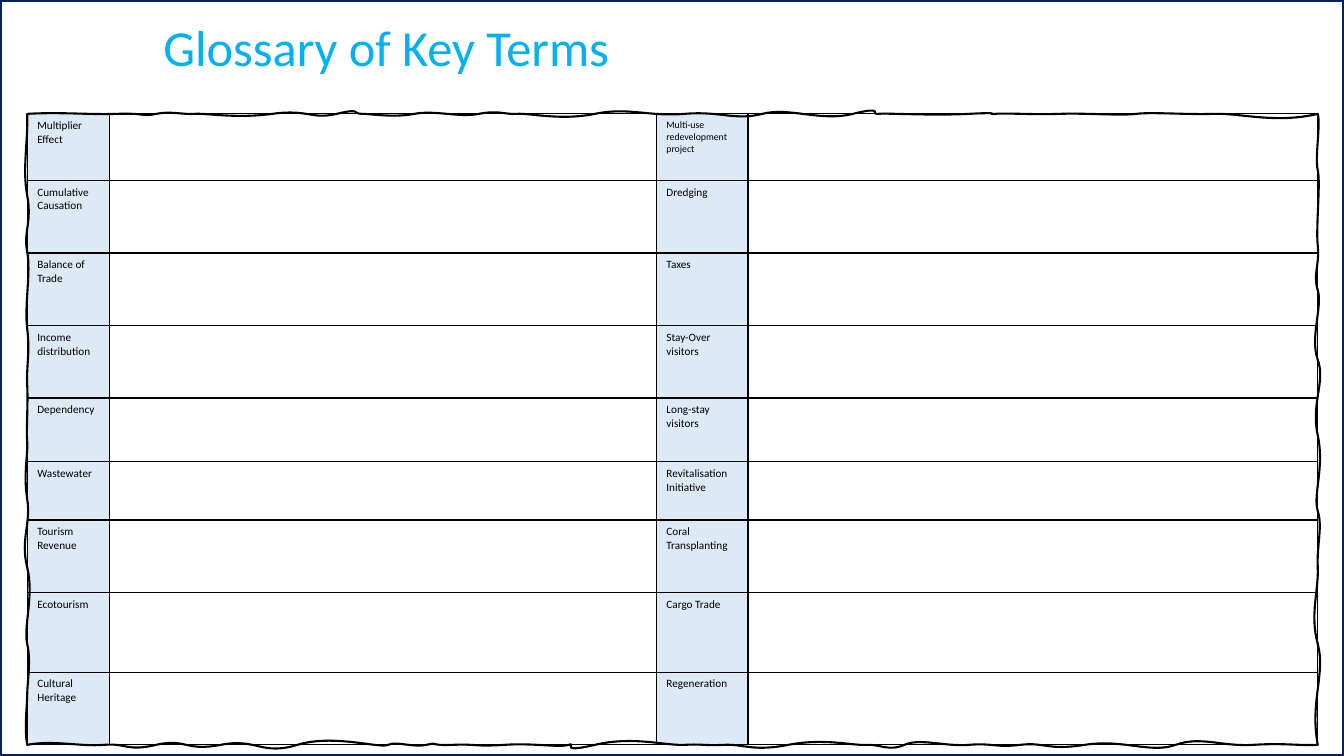
from lxml.etree import SubElement
from pptx import Presentation
from pptx.dml.color import RGBColor
from pptx.enum.shapes import MSO_SHAPE
from pptx.enum.text import MSO_ANCHOR, PP_ALIGN
from pptx.oxml.ns import qn
from pptx.util import Inches, Pt

# Content
TITLE = "Glossary of Key Terms "
TERMS = [
    ("Multiplier Effect", "Multi-use redevelopment project"),
    ("Cumulative Causation", "Dredging"),
    ("Balance of Trade", "Taxes"),
    ("Income distribution", "Stay-Over visitors"),
    ("Dependency", "Long-stay visitors"),
    ("Wastewater", "Revitalisation Initiative"),
    ("Tourism Revenue", "Coral Transplanting"),
    ("Ecotourism", "Cargo Trade"),
    ("Cultural Heritage", "Regeneration"),
]
COLUMN_WIDTHS = [0.82, 5.42, 0.91, 5.65]
ROW_HEIGHTS = [0.66, 0.72, 0.72, 0.72, 0.63, 0.58, 0.72, 0.79, 0.72]


class Theme:
    font = "Calibri"
    white = RGBColor(0xFF, 0xFF, 0xFF)
    black = RGBColor(0, 0, 0)
    navy = RGBColor(0x00, 0x20, 0x60)
    sky = RGBColor(0x00, 0xB0, 0xF0)
    term_fill = RGBColor(0xDD, 0xEA, 0xF6)
    title_size = Pt(36)
    term_size = Pt(8)
    long_term_size = Pt(7)
    long_term_length = 30


LEFT, TOP, RIGHT, BOTTOM = 0.27, 1.13, 13.07, 7.39

# Hand-drawn sides: level, first handle, then (handle along, handle across, end along).
# Each later curve starts with the mirror image of the handle before it.
TOP_SIDE = (TOP, (0.62, 1.11), [
    (0.88, 1.14, 1.16), (1.41, 1.16, 1.55), (1.83, 1.14, 1.93), (2.34, 1.18, 2.7),
    (3.09, 1.19, 3.34), (3.49, 1.13, 3.59), (3.9, 1.17, 4.11), (4.55, 1.17, 4.75),
    (5.01, 1.14, 5.13), (5.56, 1.2, 5.9), (6.43, 1.16, 6.79), (7.29, 1.2, 7.56),
    (8.14, 1.21, 8.46), (8.63, 1.14, 8.71), (9.23, 1.15, 9.61), (9.76, 1.14, 9.87),
    (10.26, 1.14, 10.51), (11.11, 1.15, 11.27), (11.78, 1.14, 12.04), (12.65, 1.23, RIGHT)])
RIGHT_SIDE = (RIGHT, (1.24, 13.1), [
    (1.56, 13.04, 1.69), (2.24, 13.05, 2.44), (2.72, 13.02, 2.88), (3.35, 12.99, 3.57),
    (4, 13, 4.32), (4.91, 13.02, 5.07), (5.4, 13.06, 5.63), (6.1, 12.99, 6.39),
    (6.96, 12.99, BOTTOM)])
BOTTOM_SIDE = (BOTTOM, (12.88, 7.4), [
    (12.74, 7.37, 12.43), (11.91, 7.3, 11.66), (11.14, 7.33, 10.76), (10.36, 7.36, 10.12),
    (9.84, 7.37, 9.61), (9.12, 7.32, 8.97), (8.72, 7.38, 8.59), (8.18, 7.32, 7.82),
    (7.38, 7.38, 7.18), (6.98, 7.38, 6.79), (6.28, 7.3, 5.9), (5.73, 7.36, 5.64),
    (5.3, 7.37, 5), (4.74, 7.38, 4.49), (4.36, 7.36, 4.23), (3.93, 7.35, 3.85),
    (3.31, 7.28, 2.95), (2.55, 7.32, 2.19), (1.85, 7.32, 1.55), (1.26, 7.37, 1.03),
    (0.53, 7.34, LEFT)])
LEFT_SIDE = (LEFT, (7.22, 0.24), [
    (7, 0.27, 6.89), (6.55, 0.31, 6.39), (5.91, 0.34, 5.63), (5.2, 0.31, 4.95),
    (4.5, 0.28, 4.38), (4, 0.28, 3.82), (3.49, 0.3, 3.26), (2.7, 0.31, 2.5),
    (2.21, 0.32, 1.94), (1.41, 0.28, TOP)])


def side_curves(side, upright=False):
    """Curves of one wavy side: two handles and an end, each (x, y) in inches."""
    level, handle, segments = side
    curves = []
    for along, across, end_along in segments:
        bend, end = (along, across), (end_along, level)
        curve = (handle, bend, end)
        curves.append([point[::-1] for point in curve] if upright else curve)
        handle = tuple(2 * e - b for e, b in zip(end, bend))
    return curves


def add_page_border(slide):
    border = slide.shapes.add_shape(MSO_SHAPE.RECTANGLE, 0, 0, Inches(13.33), Inches(7.5))
    border.shadow.inherit = False
    border.fill.solid()
    border.fill.fore_color.rgb = Theme.white
    border.line.color.rgb = Theme.navy
    border.line.width = Pt(2.25)


def set_cell_borders(cell):
    properties = cell._tc.get_or_add_tcPr()
    for position, tag in enumerate(("a:lnL", "a:lnR", "a:lnT", "a:lnB")):
        line = SubElement(properties, qn(tag), w=str(Pt(1)))
        fill = SubElement(line, qn("a:solidFill"))
        SubElement(fill, qn("a:srgbClr"), val=str(Theme.black))
        properties.insert(position, line)


def add_glossary(slide):
    table = slide.shapes.add_table(
        len(TERMS), len(COLUMN_WIDTHS), Inches(LEFT), Inches(TOP),
        Inches(sum(COLUMN_WIDTHS)), Inches(sum(ROW_HEIGHTS))).table
    table.first_row = table.horz_banding = False
    for column, width in zip(table.columns, COLUMN_WIDTHS):
        column.width = Inches(width)
    for row, height, (left_term, right_term) in zip(table.rows, ROW_HEIGHTS, TERMS):
        row.height = Inches(height)
        for cell, term in zip(row.cells, (left_term, "", right_term, "")):
            cell.fill.solid()
            cell.fill.fore_color.rgb = Theme.term_fill if term else Theme.white
            set_cell_borders(cell)
            if not term:
                continue
            cell.text_frame.text = term
            font = cell.text_frame.paragraphs[0].runs[0].font
            is_long = len(term) > Theme.long_term_length
            font.size = Theme.long_term_size if is_long else Theme.term_size
            font.name = Theme.font
            font.color.rgb = Theme.black


def add_sketched_frame(slide):
    curves = (side_curves(TOP_SIDE) + side_curves(RIGHT_SIDE, upright=True)
              + side_curves(BOTTOM_SIDE) + side_curves(LEFT_SIDE, upright=True))
    builder = slide.shapes.build_freeform(Inches(LEFT), Inches(TOP))
    builder.add_line_segments([(Inches(x), Inches(y)) for _, _, (x, y) in curves], close=True)
    frame = builder.convert_to_shape()
    # Turn each straight segment into a curve
    for segment, curve in zip(list(frame.element.iter(qn("a:lnTo"))), curves):
        bezier = SubElement(segment.getparent(), qn("a:cubicBezTo"))
        for x, y in curve:
            SubElement(bezier, qn("a:pt"), x=str(Inches(x) - Inches(LEFT)),
                       y=str(Inches(y) - Inches(TOP)))
        segment.getparent().replace(segment, bezier)
    frame.shadow.inherit = False
    frame.fill.background()
    frame.line.color.rgb = Theme.black
    frame.line.width = Pt(1.5)


def place_title(slide):
    title = slide.shapes.title
    title.left, title.top = Inches(1.52), Inches(0.11)
    title.width, title.height = Inches(5.1), Inches(0.71)
    title.fill.solid()
    title.fill.fore_color.rgb = Theme.white
    title.text_frame.text = TITLE
    title.text_frame.vertical_anchor = MSO_ANCHOR.TOP
    title.text_frame.word_wrap = True
    paragraph = title.text_frame.paragraphs[0]
    paragraph.alignment = PP_ALIGN.JUSTIFY
    font = paragraph.runs[0].font
    font.name, font.size = Theme.font, Theme.title_size
    font.color.rgb = Theme.sky
    # Bring the title in front of the page border
    title.element.getparent().append(title.element)


def main():
    presentation = Presentation()
    presentation.slide_width, presentation.slide_height = Inches(13.33), Inches(7.5)
    slide = presentation.slides.add_slide(presentation.slide_layouts[5])
    add_page_border(slide)
    add_glossary(slide)
    add_sketched_frame(slide)
    place_title(slide)
    presentation.save("out.pptx")


if __name__ == "__main__":
    main()
